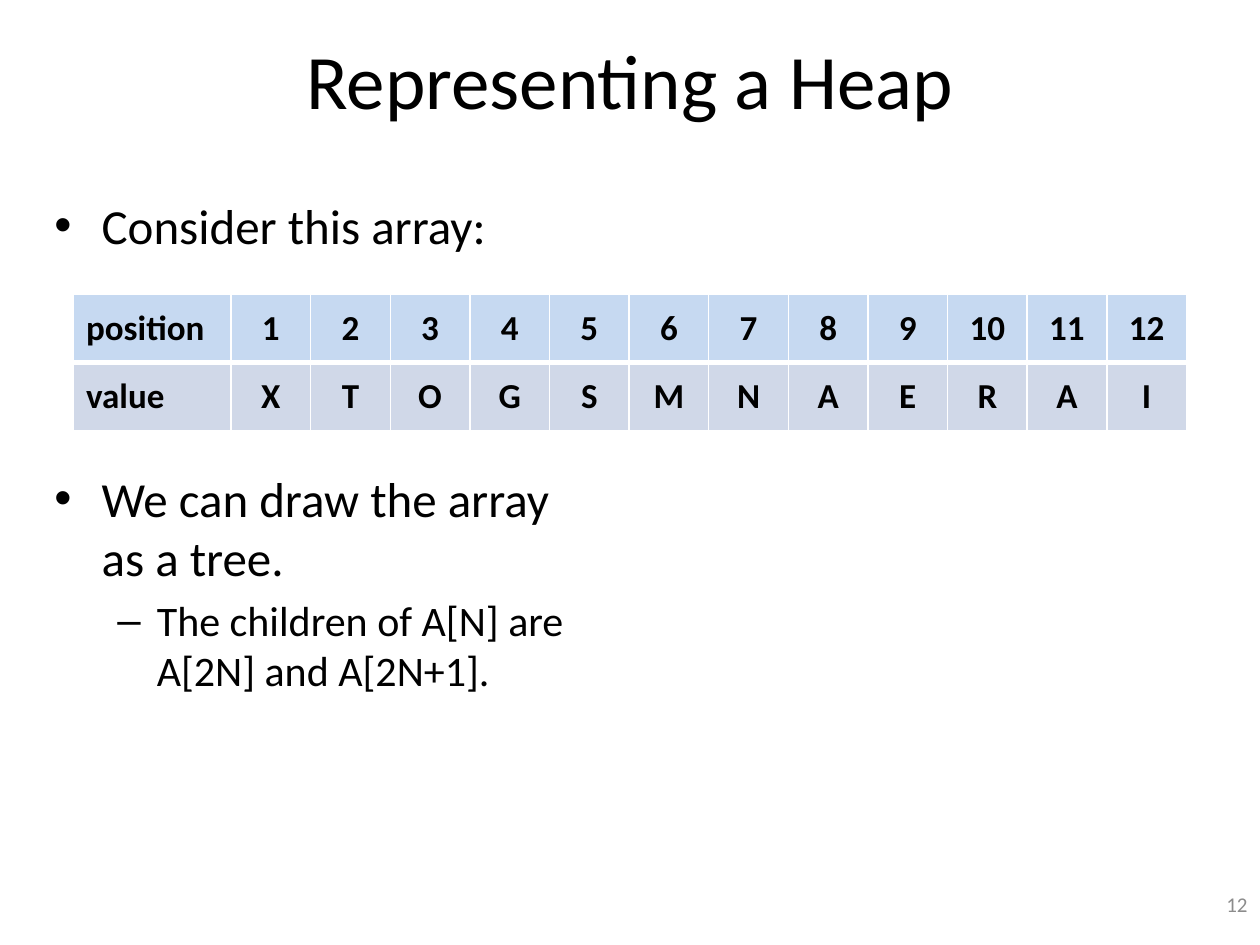
from lxml.etree import SubElement
from pptx import Presentation
from pptx.dml.color import RGBColor
from pptx.enum.text import MSO_ANCHOR as Anchor, PP_ALIGN as Align
from pptx.oxml.ns import qn
from pptx.util import Pt

FONT = "Calibri"
COLORS = {
    "text": "000000",
    "number": "8C8C8C",
    "position": "C6D9F1",
    "value": "D0D8E8",
    "border": "FFFFFF",
}
HEAP = "XTOGSMNAERAI"
LABEL_WIDTH, ENTRY_WIDTH, ROW_HEIGHT = 90, 45.5, 39

# text, size, bullet, left margin, hanging indent, space before
BULLETS = [
    ("Consider this array:", 28, "•", 27, 27, 0),
    # The wide gap leaves room for the table
    ("We can draw the array as a tree.", 28, "•", 27, 27, 122.5),
    ("The children of A[N] are A[2N] and A[2N+1].", 24, "–", 58.5, 22.5, 4.8),
]


def color(name):
    return RGBColor.from_string(COLORS[name])


def style(para, size, align=Align.LEFT, tone="text", bold=False):
    para.alignment = align
    font = para.font
    font.name, font.size, font.bold = FONT, Pt(size), bold
    font.color.rgb = color(tone)


def add_text_box(page, left, top, width, height, anchor=Anchor.MIDDLE):
    box = page.shapes.add_textbox(Pt(left), Pt(top), Pt(width), Pt(height))
    frame = box.text_frame
    frame.word_wrap = True
    frame.vertical_anchor = anchor
    return frame


def add_line(page, bounds, text, size, align, tone="text"):
    para = add_text_box(page, *bounds).paragraphs[0]
    para.text = text
    style(para, size, align, tone)


def set_bullet(para, mark, margin, hanging):
    properties = para._p.get_or_add_pPr()
    properties.set("marL", str(Pt(margin)))
    properties.set("indent", str(-Pt(hanging)))
    SubElement(properties, qn("a:buFont"), typeface="Arial")
    SubElement(properties, qn("a:buChar"), char=mark)


def add_bullets(page, bounds, items):
    frame = add_text_box(page, *bounds, anchor=Anchor.TOP)
    for index, (text, size, mark, margin, hanging, gap) in enumerate(items):
        para = frame.add_paragraph() if index else frame.paragraphs[0]
        para.text = text
        para.space_before = Pt(gap)
        style(para, size)
        set_bullet(para, mark, margin, hanging)


def set_borders(cell, widths):
    properties = cell._tc.get_or_add_tcPr()
    for side, width in widths.items():
        line = SubElement(properties, qn(f"a:ln{side}"), w=str(Pt(width)))
        fill = SubElement(line, qn("a:solidFill"))
        SubElement(fill, qn("a:srgbClr"), val=COLORS["border"])


def add_array_table(page, left, top):
    rows = {"position": range(1, len(HEAP) + 1), "value": HEAP}
    widths = [LABEL_WIDTH] + [ENTRY_WIDTH] * len(HEAP)
    table = page.shapes.add_table(
        len(rows), len(widths), Pt(left), Pt(top),
        Pt(sum(widths)), Pt(ROW_HEIGHT * len(rows))).table
    for column, width in zip(table.columns, widths):
        column.width = Pt(width)
    for r, (label, entries) in enumerate(rows.items()):
        table.rows[r].height = Pt(ROW_HEIGHT)
        # A thick rule separates positions from values
        borders = {"L": 1, "R": 1, "T": 3 if r else 1, "B": 1 if r else 3}
        for c, entry in enumerate([label, *entries]):
            cell = table.cell(r, c)
            set_borders(cell, borders)
            cell.fill.solid()
            cell.fill.fore_color.rgb = color(label)
            cell.vertical_anchor = Anchor.MIDDLE
            para = cell.text_frame.paragraphs[0]
            para.text = str(entry)
            style(para, 20, Align.CENTER if c else Align.LEFT, bold=True)


def main():
    deck = Presentation()
    deck.slide_width, deck.slide_height = Pt(720), Pt(540)
    page = deck.slides.add_slide(deck.slide_layouts[6])

    # Title
    add_line(page, (36, 6, 648, 78), "Representing a Heap", 44, Align.CENTER)
    # Body text
    add_bullets(page, (24, 108, 306, 396), BULLETS)
    # Page number
    add_line(page, (552, 502.5, 168, 28.75), "12", 12, Align.RIGHT, "number")
    # Array
    add_array_table(page, 42, 168)

    deck.save("out.pptx")


if __name__ == "__main__":
    main()
